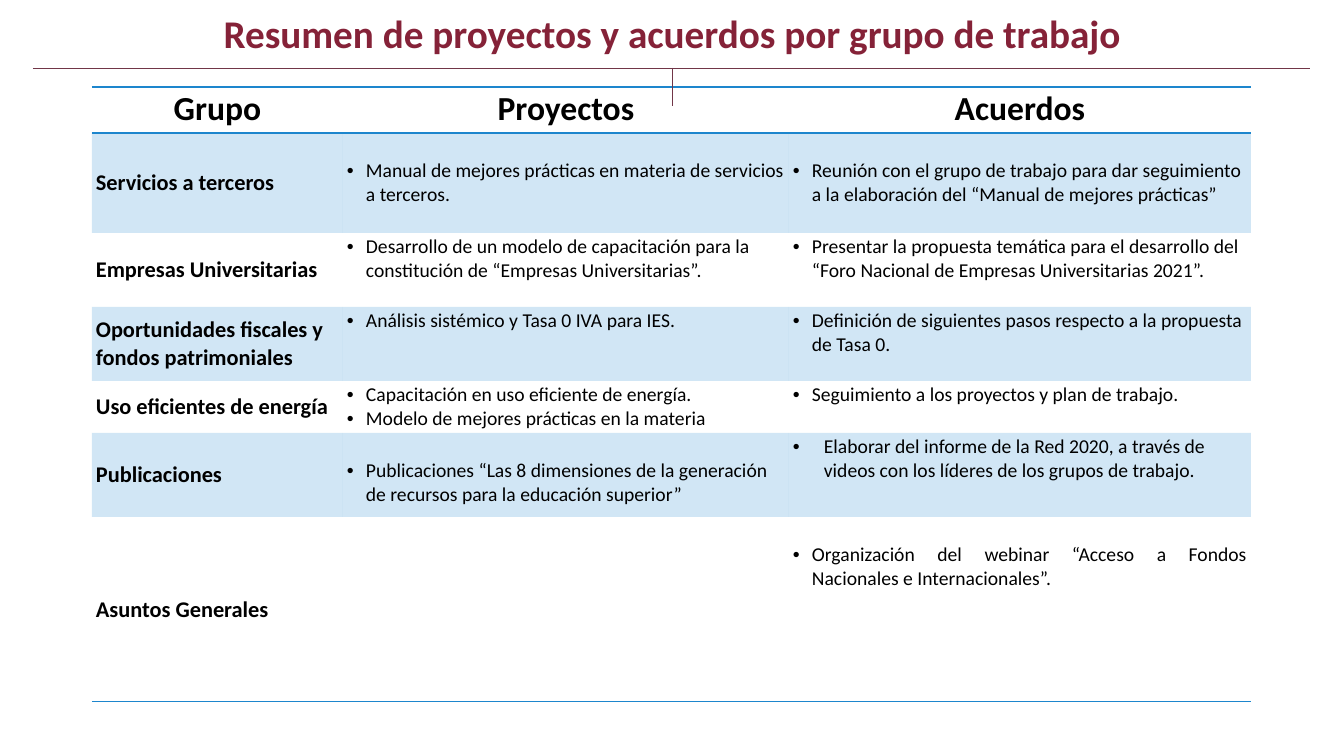
"""Build the slide that sums up projects and agreements by working group."""
from dataclasses import dataclass

from lxml.etree import SubElement
from pptx import Presentation
from pptx.dml.color import RGBColor
from pptx.enum.shapes import MSO_CONNECTOR as Connector
from pptx.enum.text import MSO_ANCHOR as Anchor, MSO_AUTO_SIZE as AutoSize, PP_ALIGN as Align
from pptx.oxml import parse_xml
from pptx.oxml.ns import nsdecls, qn
from pptx.util import Emu, Pt

EMU_PER_PX = 914400 / 100.8
FONT = "Calibri"
NO_STYLE = "{2D5ABB26-0587-4C30-8999-92F81FD0307C}"
BLACK = RGBColor(0x00, 0x00, 0x00)
BLUE = RGBColor(0x1D, 0x86, 0xCD)
WINE = RGBColor(0x85, 0x22, 0x38)
RULE = RGBColor(0x71, 0x36, 0x48)
LINE_DROP = 24

TITLE = "Resumen de proyectos y acuerdos por grupo de trabajo"
HEADINGS = ("Grupo", "Proyectos", "Acuerdos")
COLUMN_WIDTHS = (251, 446, 462)
HEADER_HEIGHT = 46


@dataclass
class Bullets:
    """Bulleted lines of one cell, with their offset from its top."""
    lines: tuple = ()
    drop: int = 0
    indent: int = 19
    align: Align = Align.LEFT


GROUPS = (
    (100, "Servicios a terceros",
     Bullets(("Manual de mejores prácticas en materia de servicios a terceros.",), LINE_DROP),
     Bullets(("Reunión con el grupo de trabajo para dar seguimiento a la elaboración "
              "del “Manual de mejores prácticas”",), LINE_DROP)),
    (74, "Empresas Universitarias",
     Bullets(("Desarrollo de un modelo de capacitación para la constitución de "
              "“Empresas Universitarias”.",)),
     Bullets(("Presentar la propuesta temática para el desarrollo del “Foro Nacional "
              "de Empresas Universitarias 2021”.",))),
    (74, "Oportunidades fiscales y fondos patrimoniales",
     Bullets(("Análisis sistémico y Tasa 0 IVA para IES.",)),
     Bullets(("Definición de siguientes pasos respecto a la propuesta de Tasa 0.",))),
    (52, "Uso eficientes de energía",
     Bullets(("Capacitación en uso eficiente de energía.",
              "Modelo de mejores prácticas en la materia")),
     Bullets(("Seguimiento a los proyectos y plan de trabajo.",), align=Align.JUSTIFY)),
    (84, "Publicaciones",
     Bullets(("Publicaciones “Las 8 dimensiones de la generación de recursos para la "
              "educación superior”",), LINE_DROP),
     Bullets(("Elaborar del informe de la Red 2020, a través de videos con los líderes "
              "de los grupos de trabajo.",), indent=31)),
    (185, "Asuntos Generales",
     Bullets(),
     Bullets(("Organización del webinar “Acceso a Fondos Nacionales e Internacionales”.",),
             LINE_DROP, align=Align.JUSTIFY)),
)


def px(length):
    """Turn a length in px into EMU."""
    return Emu(round(length * EMU_PER_PX))


def format_runs(para, size, color=BLACK, bold=False):
    """Set the font of every run in a paragraph."""
    for run in para.runs:
        run.font.name = FONT
        run.font.size = Pt(size)
        run.font.bold = bold
        run.font.color.rgb = color


def add_title(page, left, top, width, height):
    """Place and format the title."""
    title = page.shapes.title
    title.left, title.top, title.width, title.height = map(px, (left, top, width, height))
    frame = title.text_frame
    frame.text = TITLE
    frame.word_wrap = True
    frame.auto_size = AutoSize.NONE
    frame.vertical_anchor = Anchor.MIDDLE
    para = frame.paragraphs[0]
    para.alignment = Align.CENTER
    para.line_spacing = 0.9
    para.space_after = Pt(6)
    format_runs(para, 28, WINE, True)


def add_rule(page, *ends):
    """Draw a thin line between two points."""
    rule = page.shapes.add_connector(Connector.STRAIGHT, *map(px, ends))
    rule.line.color.rgb = RULE
    rule.line.width = Pt(0.5)
    SubElement(rule._element.spPr, qn("a:effectLst"))


def add_borders(cell, *sides):
    """Draw blue borders on the sides named, in schema order."""
    for index, side in enumerate(sides):
        border = parse_xml(
            f'<a:{side} {nsdecls("a")} w="{Pt(1)}"><a:solidFill>'
            f'<a:srgbClr val="{BLUE}"/></a:solidFill></a:{side}>')
        cell._tc.get_or_add_tcPr().insert(index, border)


def shade(cell, banded):
    """Fill a banded cell with pale blue and leave others clear."""
    if not banded:
        cell.fill.background()
        return
    cell.fill.solid()
    cell.fill.fore_color.rgb = BLUE
    color = cell._tc.tcPr.find(qn("a:solidFill")).find(qn("a:srgbClr"))
    SubElement(color, qn("a:alpha"), val="20000")


def set_margins(cell, drop=0):
    """Set narrow cell margins, with an extra drop at the top."""
    cell.margin_left = cell.margin_right = px(4)
    cell.margin_top = px(2 + drop)
    cell.margin_bottom = px(2)


def fill_label(cell, text, size, align, anchor):
    """Write a bold heading or group name in a cell."""
    set_margins(cell)
    cell.text_frame.text = text
    cell.vertical_anchor = anchor
    para = cell.text_frame.paragraphs[0]
    para.alignment = align
    format_runs(para, size, bold=True)


def fill_bullets(cell, bullets):
    """Write a bulleted list in a cell."""
    set_margins(cell, bullets.drop)
    if not bullets.lines:
        return
    cell.text_frame.text = "\n".join(bullets.lines)
    for para in cell.text_frame.paragraphs:
        para.alignment = bullets.align
        properties = para._p.get_or_add_pPr()
        properties.set("marL", str(px(bullets.indent)))
        properties.set("indent", str(px(-bullets.indent)))
        SubElement(properties, qn("a:buFont"), typeface="Arial")
        SubElement(properties, qn("a:buChar"), char="•")
        format_runs(para, 14)


def add_groups(page, left, top):
    """Add the table of groups, projects and agreements."""
    heights = (HEADER_HEIGHT, *(group[0] for group in GROUPS))
    box = map(px, (left, top, sum(COLUMN_WIDTHS), sum(heights)))
    table = page.shapes.add_table(len(heights), len(COLUMN_WIDTHS), *box).table
    table.first_row = table.horz_banding = False
    table._tbl.tblPr.find(qn("a:tableStyleId")).text = NO_STYLE
    for column, width in zip(table.columns, COLUMN_WIDTHS):
        column.width = px(width)
    for row, height in zip(table.rows, heights):
        row.height = px(height)
    for cell, heading in zip(table.rows[0].cells, HEADINGS):
        fill_label(cell, heading, 24, Align.CENTER, Anchor.TOP)
        shade(cell, False)
        add_borders(cell, "lnT", "lnB")
    for number, (_, name, *lists) in enumerate(GROUPS, 1):
        cells = list(table.rows[number].cells)
        fill_label(cells[0], name, 16, Align.LEFT, Anchor.MIDDLE)
        for cell, bullets in zip(cells[1:], lists):
            fill_bullets(cell, bullets)
        for cell in cells:
            shade(cell, number % 2 == 1)
            if number == len(GROUPS):
                add_borders(cell, "lnB")


def main():
    """Build and save the deck."""
    deck = Presentation()
    deck.slide_width, deck.slide_height = px(1344), px(756)
    page = deck.slides.add_slide(deck.slide_layouts[5])
    add_groups(page, 92, 87)
    add_title(page, 61, 10, 1222, 52)
    add_rule(page, 33, 68, 1310, 68)
    add_rule(page, 672, 68, 672, 106)
    deck.save("out.pptx")


if __name__ == "__main__":
    main()
